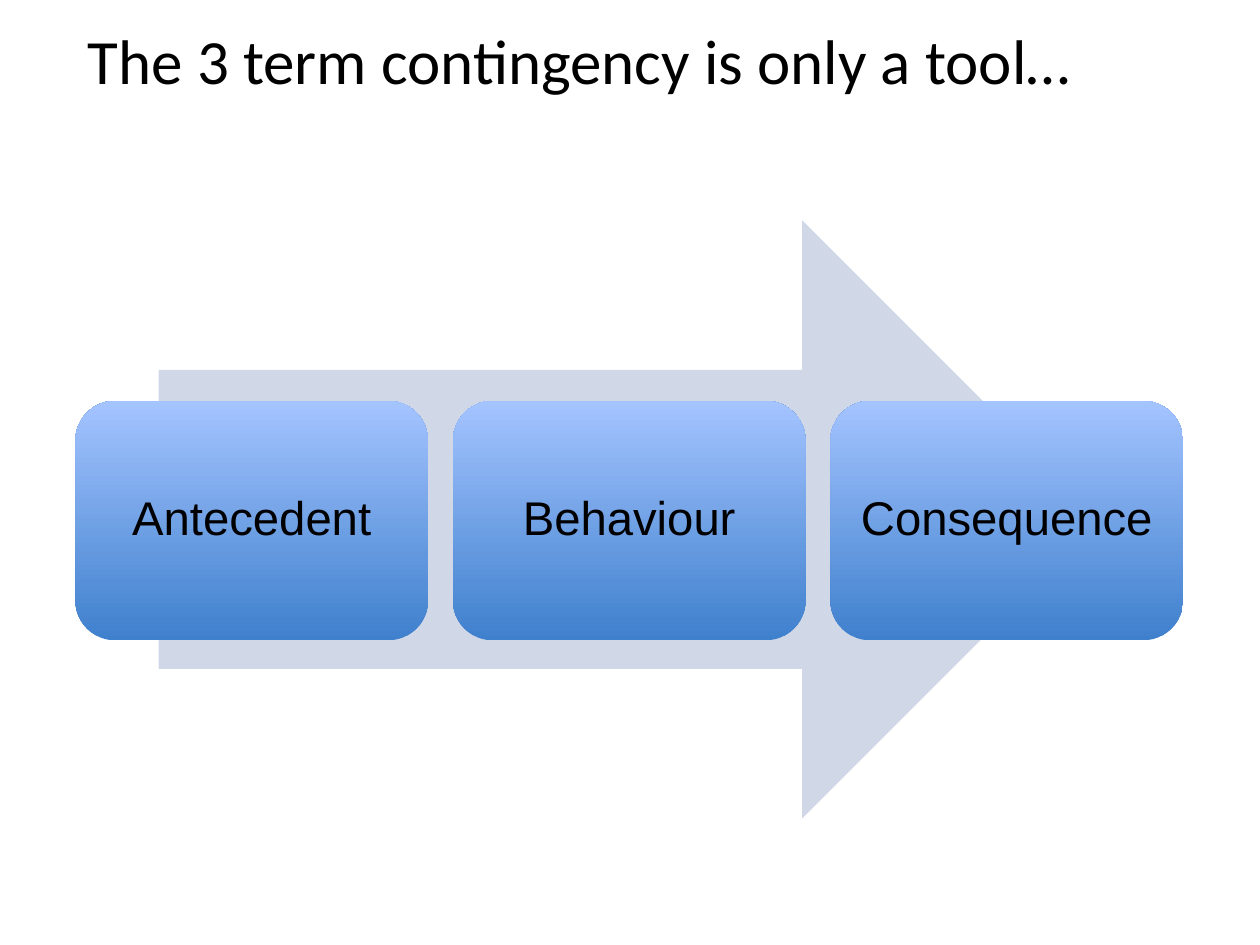
"""Builds a slide with the three term contingency on an arrow."""
import pptx
import pptx.dml.color
import pptx.enum.shapes
import pptx.enum.text
import pptx.util

Cm = pptx.util.Cm
RGBColor = pptx.dml.color.RGBColor
Shape = pptx.enum.shapes.MSO_SHAPE
Align = pptx.enum.text.PP_ALIGN
Anchor = pptx.enum.text.MSO_ANCHOR

BLACK = RGBColor(0x00, 0x00, 0x00)
PALE = RGBColor(0xD0, 0xD8, 0xE8)
DARK = RGBColor(0x3F, 0x80, 0xCD)
LIGHT = RGBColor(0xA4, 0xC4, 0xFF)


def write(frame, text, face, size):
    frame.word_wrap = True
    frame.text = text
    font = frame.paragraphs[0].runs[0].font
    font.name = face
    font.size = pptx.util.Pt(size)
    font.color.rgb = BLACK


deck = pptx.Presentation()
deck.slide_width = Cm(25.4)
deck.slide_height = Cm(19.05)
slide = deck.slides.add_slide(deck.slide_layouts[6])

title = slide.shapes.add_textbox(Cm(1.52), Cm(0.3), Cm(22.35), Cm(3.05))
write(title.text_frame, "The 3 term contingency is only a tool…", "Calibri", 36)

arrow = slide.shapes.add_shape(
    Shape.RIGHT_ARROW, Cm(3.2), Cm(4.44), Cm(19), Cm(12.06))
arrow.shadow.inherit = False
arrow.fill.solid()
arrow.fill.fore_color.rgb = PALE
arrow.line.fill.background()

left, pitch = 1.52, 7.61
for index, term in enumerate(["Antecedent", "Behaviour", "Consequence"]):
    box = slide.shapes.add_shape(
        Shape.ROUNDED_RECTANGLE,
        Cm(left + index * pitch), Cm(8.08), Cm(7.11), Cm(4.83))
    box.shadow.inherit = False
    box.line.fill.background()
    box.fill.gradient()
    box.fill.gradient_angle = 90
    for stop, shade in zip(box.fill.gradient_stops, [DARK, LIGHT]):
        stop.color.rgb = shade

    frame = box.text_frame
    frame.margin_left = frame.margin_right = Cm(0.28)
    frame.margin_top = frame.margin_bottom = Cm(0.28)
    frame.vertical_anchor = Anchor.MIDDLE
    write(frame, term, "Arial", 27)
    frame.paragraphs[0].alignment = Align.CENTER
    frame.paragraphs[0].line_spacing = 0.9

deck.save("out.pptx")
